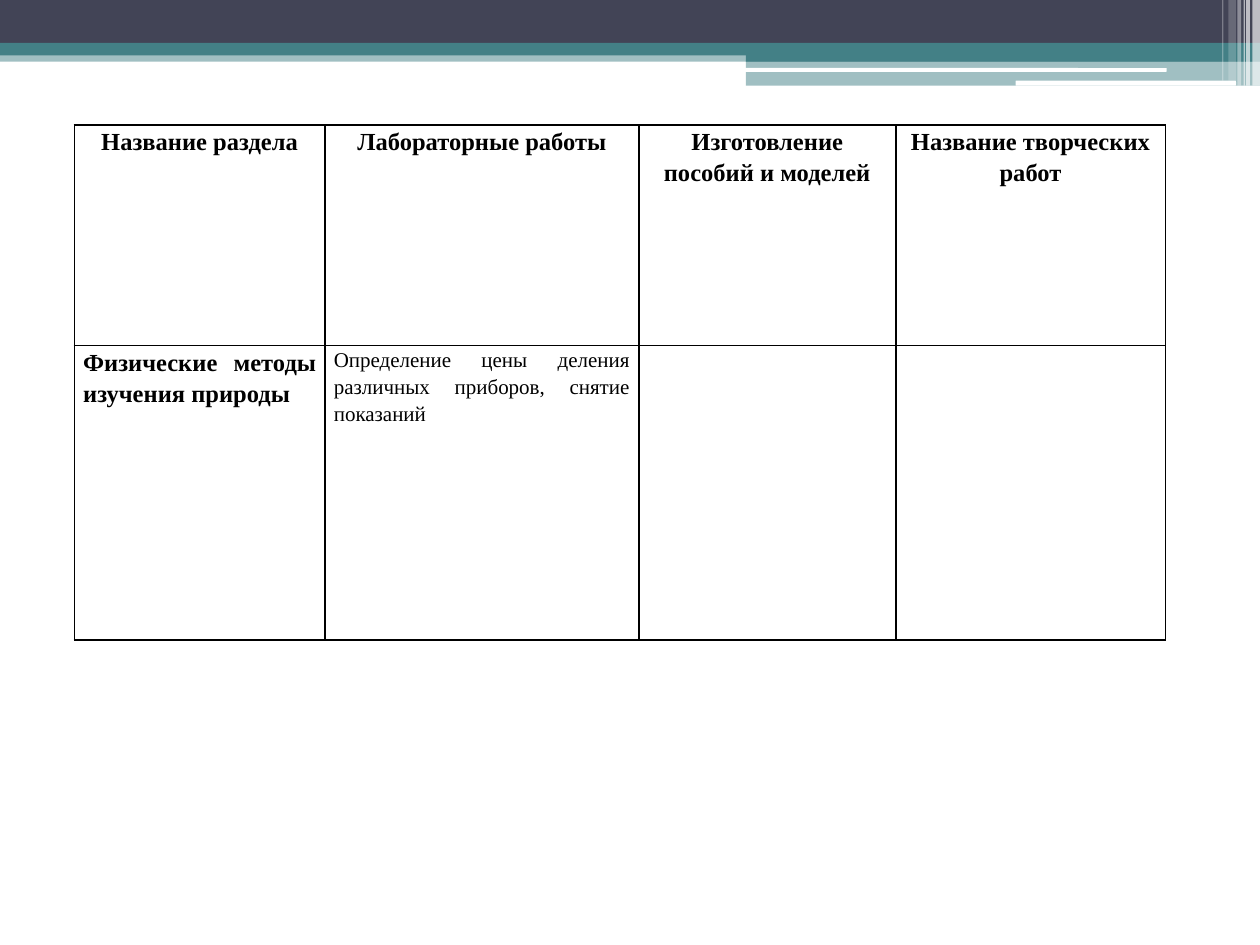
from lxml.etree import SubElement
from pptx import Presentation
from pptx.dml.color import RGBColor
from pptx.enum.shapes import MSO_SHAPE
from pptx.enum.text import PP_ALIGN
from pptx.oxml.ns import qn
from pptx.util import Inches, Pt

DARK, TEAL, WHITE, BLACK = "424456", "438086", "FFFFFF", "000000"

# left, top, width, height, colour, opacity in percent
BANDS = [
    (0, 0.4, 10, 0.09, TEAL, 50),
    (0, 0, 10, 0.34, DARK, 100),
    (0, 0.34, 10, 0.1, TEAL, 100),
    (5.92, 0.39, 4.08, 0.1, TEAL, 100),
    (5.92, 0.48, 4.08, 0.2, TEAL, 50),
]
WHITE_BARS = [(5.91, 0.54, 3.35, 0.03), (8.06, 0.64, 1.75, 0.04)]
# left, width, height, opacity in percent
STRIPES = [
    (9.94, 0.06, 0.68, 65),
    (9.89, 0.03, 0.68, 65),
    (9.87, 0.01, 0.68, 60),
    (9.82, 0.03, 0.68, 40),
    (9.75, 0.06, 0.64, 20),
    (9.7, 0.01, 0.64, 30),
]

COLUMN_WIDTHS = [1.99, 2.49, 2.04, 2.14]
ROW_HEIGHTS = [1.75, 2.34]
HEADINGS = [
    ["Название раздела"],
    ["Лабораторные работы"],
    ["Изготовление пособий и моделей"],
    ["Название творческих", "работ"],
]
SECTION = "Физические методы изучения природы"
LAB_WORK = "Определение цены деления различных приборов, снятие показаний"


def color(hex_string):
    return RGBColor.from_string(hex_string)


class SlideBuilder:
    font_name = "Times New Roman"
    line_spacing = 1.15
    cell_margin = 0.07
    border_width = 1

    def __init__(self, slide):
        self.slide = slide

    def block(self, left, top, width, height, fill, opacity=100, kind=MSO_SHAPE.RECTANGLE):
        shape = self.slide.shapes.add_shape(
            kind, Inches(left), Inches(top), Inches(width), Inches(height))
        shape.shadow.inherit = False
        shape.line.fill.background()
        shape.fill.solid()
        shape.fill.fore_color.rgb = color(fill)
        if opacity < 100:
            fill_color = shape.fill._xPr.find(qn("a:solidFill"))[0]
            SubElement(fill_color, qn("a:alpha"), val=str(opacity * 1000))

    def table(self, left, top, column_widths, row_heights):
        frame = self.slide.shapes.add_table(
            len(row_heights), len(column_widths), Inches(left), Inches(top),
            Inches(sum(column_widths)), Inches(sum(row_heights)))
        table = frame.table
        table.first_row = table.horz_banding = False
        for column, width in zip(table.columns, column_widths):
            column.width = Inches(width)
        for row, height in zip(table.rows, row_heights):
            row.height = Inches(height)
        for cell in table.iter_cells():
            self.border(cell)
            cell.fill.background()
            cell.margin_left = cell.margin_right = Inches(self.cell_margin)
            cell.margin_top = cell.margin_bottom = 0
        return table

    def border(self, cell):
        properties = cell._tc.get_or_add_tcPr()
        for side in ("lnL", "lnR", "lnT", "lnB"):
            line = SubElement(properties, qn(f"a:{side}"), w=str(Pt(self.border_width)))
            fill = SubElement(line, qn("a:solidFill"))
            SubElement(fill, qn("a:srgbClr"), val=BLACK)

    def cell_text(self, cell, lines, alignment, size=14, bold=True):
        frame = cell.text_frame
        for index, line in enumerate(lines):
            paragraph = frame.add_paragraph() if index else frame.paragraphs[0]
            paragraph.alignment = alignment
            paragraph.line_spacing = self.line_spacing
            run = paragraph.add_run()
            run.text = line
            run.font.name = self.font_name
            run.font.size = Pt(size)
            run.font.bold = bold
            run.font.color.rgb = color(BLACK)


def main():
    presentation = Presentation()
    presentation.slide_width = Inches(10)
    presentation.slide_height = Inches(7.5)
    builder = SlideBuilder(presentation.slides.add_slide(presentation.slide_layouts[6]))

    for band in BANDS:
        builder.block(*band)
    for bar in WHITE_BARS:
        builder.block(*bar, WHITE, kind=MSO_SHAPE.ROUNDED_RECTANGLE)
    for left, width, height, opacity in STRIPES:
        builder.block(left, 0, width, height, WHITE, opacity)

    table = builder.table(0.59, 0.99, COLUMN_WIDTHS, ROW_HEIGHTS)
    for column, heading in enumerate(HEADINGS):
        builder.cell_text(table.cell(0, column), heading, PP_ALIGN.CENTER)
    builder.cell_text(table.cell(1, 0), [SECTION], PP_ALIGN.JUSTIFY)
    builder.cell_text(table.cell(1, 1), [LAB_WORK], PP_ALIGN.JUSTIFY, size=12, bold=False)

    presentation.save("out.pptx")


if __name__ == "__main__":
    main()
